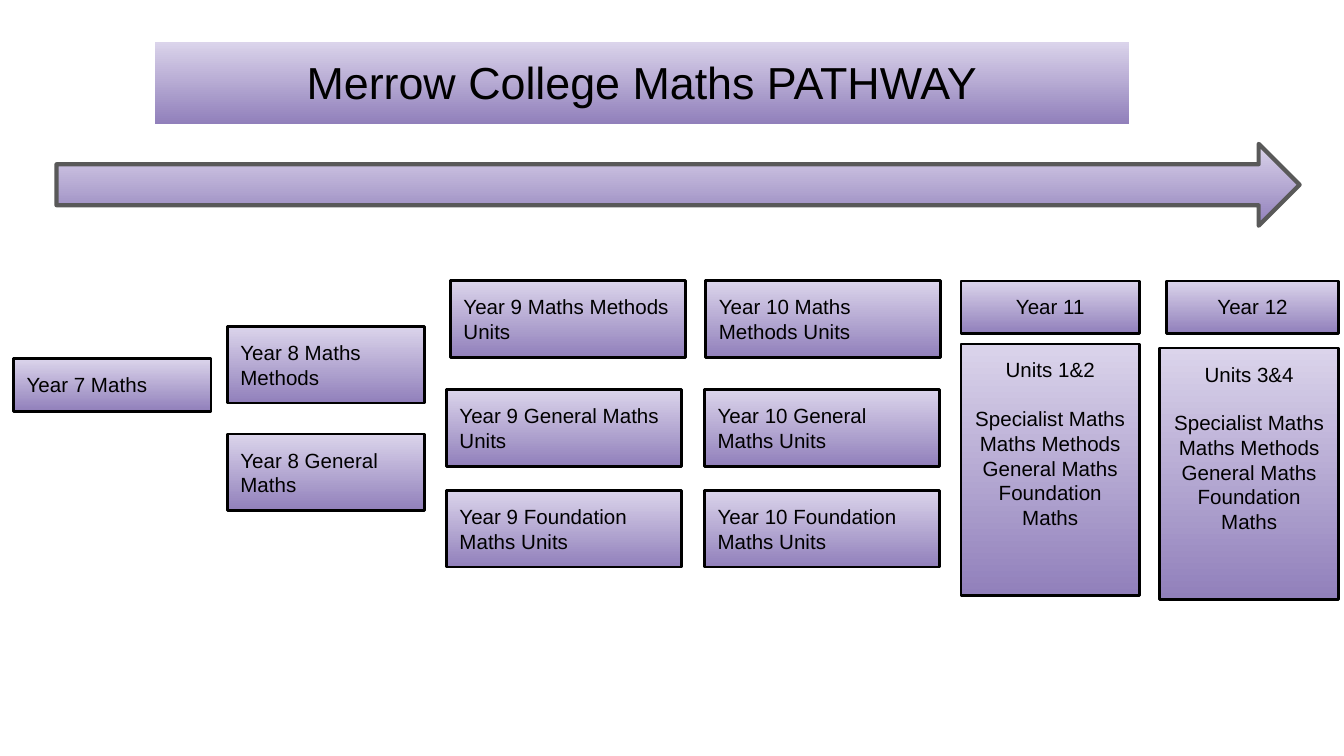
from dataclasses import dataclass

from pptx import Presentation
from pptx.dml.color import RGBColor
from pptx.enum.shapes import MSO_SHAPE as Preset
from pptx.enum.text import MSO_ANCHOR as Anchor, MSO_AUTO_SIZE as AutoSize, PP_ALIGN as Align
from pptx.util import Inches, Pt


@dataclass(frozen=True)
class Theme:
    font: str = "Arial"
    light: RGBColor = RGBColor(0xDB, 0xD4, 0xEB)
    dark: RGBColor = RGBColor(0x91, 0x80, 0xBB)
    ink: RGBColor = RGBColor(0x00, 0x00, 0x00)
    arrow_line: RGBColor = RGBColor(0x59, 0x59, 0x59)
    title_size: Pt = Pt(24)
    body_size: Pt = Pt(11)
    heading_gap: Pt = Pt(13)
    box_line: Pt = Pt(1.5)
    arrow_width: Pt = Pt(2.25)


theme = Theme()


def shade(shape):
    shape.fill.gradient()
    shape.fill.gradient_angle = 270
    for stop, color in zip(shape.fill.gradient_stops, (theme.light, theme.dark)):
        stop.color.rgb = color


def write(shape, lines, size, align):
    frame = shape.text_frame
    frame.word_wrap = True
    frame.auto_size = AutoSize.NONE
    frame.vertical_anchor = Anchor.TOP
    frame.margin_left = frame.margin_right = Inches(0.1)
    frame.margin_top = frame.margin_bottom = Inches(0.1)
    for index, line in enumerate(lines):
        paragraph = frame.add_paragraph() if index else frame.paragraphs[0]
        paragraph.alignment = align
        run = paragraph.add_run()
        run.text = line
        run.font.name = theme.font
        run.font.size = size
        run.font.color.rgb = theme.ink
    if len(lines) > 1:
        frame.paragraphs[0].space_after = theme.heading_gap


prs = Presentation()
prs.slide_width, prs.slide_height = Inches(10), Inches(10 * 9 / 16)
slide = prs.slides.add_slide(prs.slide_layouts[5])

title = slide.shapes.title
title.left, title.top = Inches(1.15), Inches(0.31)
title.width, title.height = Inches(7.25), Inches(0.61)
shade(title)
write(title, ["Merrow College Maths PATHWAY"], theme.title_size, Align.CENTER)

timeline = slide.shapes.add_shape(
    Preset.RIGHT_ARROW, Inches(0.42), Inches(1.07), Inches(9.25), Inches(0.61))
timeline.shadow.inherit = False
shade(timeline)
timeline.line.color.rgb = theme.arrow_line
timeline.line.width = theme.arrow_width

one_line, two_lines, unit_list = 0.39, 0.57, 1.87
junior, middle, senior = 1.47, 1.75, 1.33
top_row, general_row, foundation_row = 2.09, 2.9, 3.65
subjects = ["Specialist Maths", "Maths Methods", "General Maths", "Foundation Maths"]

courses = [
    (0.1, 2.67, junior, one_line, ["Year 7 Maths"], Align.LEFT),
    (1.69, 2.43, junior, two_lines, ["Year 8 Maths Methods"], Align.LEFT),
    (1.69, 3.23, junior, two_lines, ["Year 8 General Maths"], Align.LEFT),
    (7.15, top_row, senior, one_line, ["Year 11"], Align.CENTER),
    (8.68, top_row, 1.28, one_line, ["Year 12"], Align.CENTER),
    (7.15, 2.56, senior, unit_list, ["Units 1&2", *subjects], Align.CENTER),
    (8.63, 2.59, senior, unit_list, ["Units 3&4", *subjects], Align.CENTER),
]
for year, methods_left, lower_left in (("Year 9", 3.35, 3.32), ("Year 10", 5.25, 5.24)):
    for stream, left, top in (
        ("Maths Methods", methods_left, top_row),
        ("General Maths", lower_left, general_row),
        ("Foundation Maths", lower_left, foundation_row),
    ):
        courses.append((left, top, middle, two_lines, [f"{year} {stream} Units"], Align.LEFT))

for left, top, width, height, lines, align in courses:
    course = slide.shapes.add_shape(
        Preset.RECTANGLE, Inches(left), Inches(top), Inches(width), Inches(height))
    course.shadow.inherit = False
    shade(course)
    course.line.color.rgb = theme.ink
    course.line.width = theme.box_line
    write(course, lines, theme.body_size, align)

prs.save("out.pptx")
